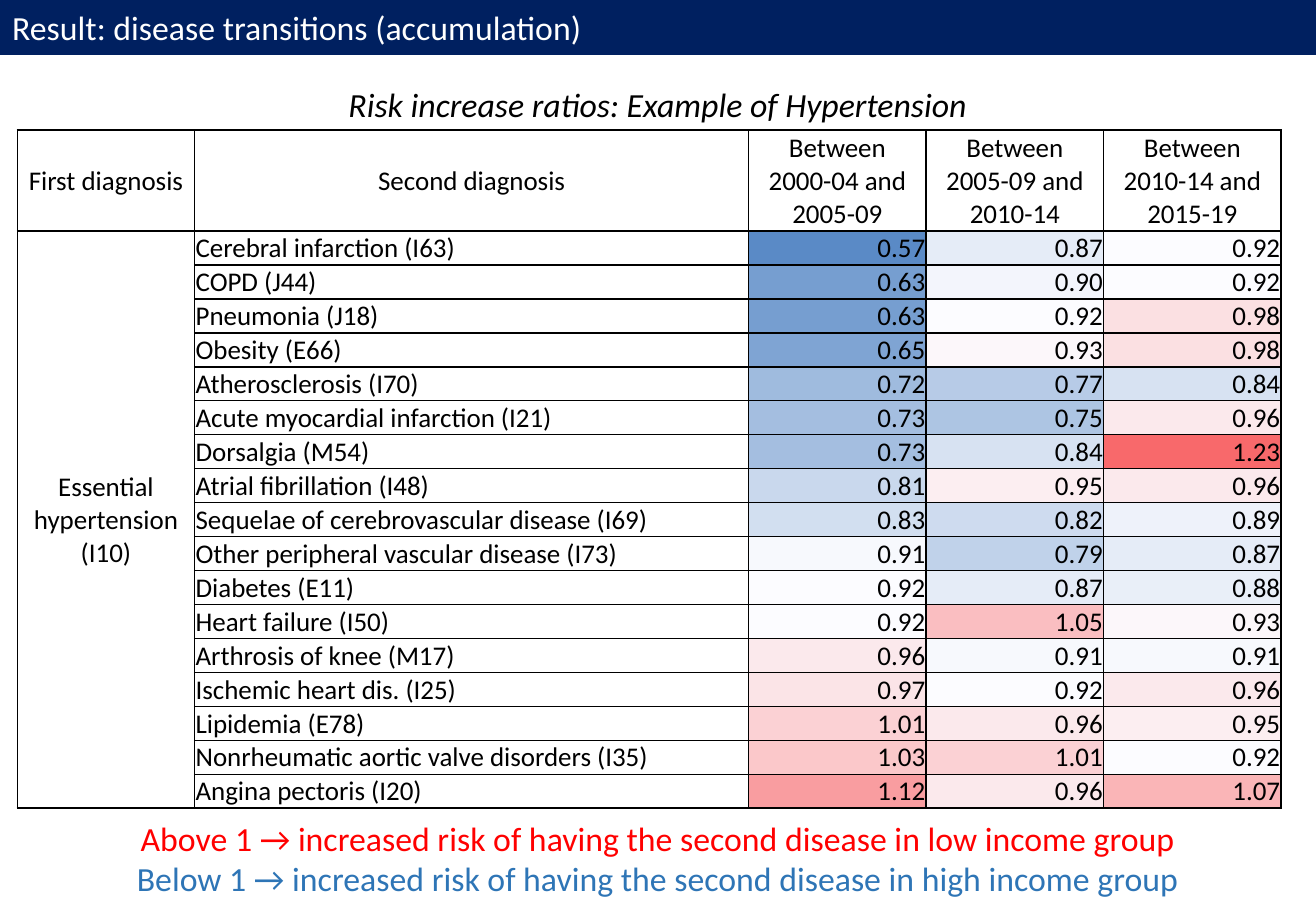
from lxml.etree import SubElement
from pptx import Presentation
from pptx.dml.color import RGBColor
from pptx.enum.text import MSO_ANCHOR, MSO_AUTO_SIZE, PP_ALIGN
from pptx.oxml.ns import qn
from pptx.util import Cm, Pt

# Content
TITLE = "Result: disease transitions (accumulation)"
SUBTITLE = "Risk increase ratios: Example of Hypertension"
READING_GUIDE = [
    ("Above 1 → increased risk of having the second disease in low income group", "above"),
    ("Below 1 → increased risk of having the second disease in high income group", "below"),
]
HEADERS = [
    "First diagnosis",
    "Second diagnosis",
    "Between\n2000-04 and 2005-09",
    "Between\n2005-09 and 2010-14",
    "Between\n2010-14 and 2015-19",
]
FIRST_DIAGNOSIS = "Essential hypertension (I10)"
RISK_RATIOS = [
    ("Cerebral infarction (I63)", 0.57, 0.87, 0.92),
    ("COPD (J44)", 0.63, 0.90, 0.92),
    ("Pneumonia (J18)", 0.63, 0.92, 0.98),
    ("Obesity (E66)", 0.65, 0.93, 0.98),
    ("Atherosclerosis (I70)", 0.72, 0.77, 0.84),
    ("Acute myocardial infarction (I21)", 0.73, 0.75, 0.96),
    ("Dorsalgia (M54)", 0.73, 0.84, 1.23),
    ("Atrial fibrillation (I48)", 0.81, 0.95, 0.96),
    ("Sequelae of cerebrovascular disease (I69)", 0.83, 0.82, 0.89),
    ("Other peripheral vascular disease (I73)", 0.91, 0.79, 0.87),
    ("Diabetes (E11)", 0.92, 0.87, 0.88),
    ("Heart failure (I50)", 0.92, 1.05, 0.93),
    ("Arthrosis of knee (M17)", 0.96, 0.91, 0.91),
    ("Ischemic heart dis. (I25)", 0.97, 0.92, 0.96),
    ("Lipidemia (E78)", 1.01, 0.96, 0.95),
    ("Nonrheumatic aortic valve disorders (I35)", 1.03, 1.01, 0.92),
    ("Angina pectoris (I20)", 1.12, 0.96, 1.07),
]

# Style
COLORS = {
    "navy": "002060", "white": "FFFFFF", "black": "000000",
    "above": "FF0000", "below": "2E75B6",
    "low": "5A8AC6", "middle": "FCFCFF", "high": "F8696B",
}
FONT = "Calibri"
SLIDE_WIDTH, SLIDE_HEIGHT = Cm(27.51), Cm(19.05)
TABLE_LEFT, TABLE_TOP = Cm(0.36), Cm(2.72)
COLUMN_WIDTHS = [Cm(3.71), Cm(11.58), Cm(3.71), Cm(3.71), Cm(3.71)]
HEADER_HEIGHT, ROW_HEIGHT = Cm(2.11), Cm(0.71)
CELL_MARGIN = Cm(0.02)


def color(name):
    return RGBColor.from_string(COLORS[name])


def format_paragraph(paragraph, size, color_name, alignment, italic=False):
    paragraph.alignment = alignment
    for run in paragraph.runs:
        run.font.name = FONT
        run.font.size = Pt(size)
        run.font.italic = italic
        run.font.color.rgb = color(color_name)


def add_centered_text(slide, top, height, lines, italic=False):
    text_frame = slide.shapes.add_textbox(0, top, SLIDE_WIDTH, height).text_frame
    text_frame.word_wrap = True
    text_frame.text = "\n".join(text for text, _ in lines)
    for paragraph, (_, color_name) in zip(text_frame.paragraphs, lines):
        format_paragraph(paragraph, 20, color_name, PP_ALIGN.CENTER, italic)


def heat_color(ratio):
    """Three-colour scale over all ratios, centred on their median."""
    ratios = sorted(value for row in RISK_RATIOS for value in row[1:])
    lowest, median, highest = ratios[0], ratios[len(ratios) // 2], ratios[-1]
    if ratio <= median:
        end, share = "low", (median - ratio) / (median - lowest)
    else:
        end, share = "high", (ratio - median) / (highest - median)
    channels = zip(color("middle"), color(end))
    return RGBColor(*(round(a + (b - a) * share) for a, b in channels))


def add_borders(cell):
    properties = cell._tc.get_or_add_tcPr()
    for position, side in enumerate(("a:lnL", "a:lnR", "a:lnT", "a:lnB")):
        line = SubElement(properties, qn(side), w=str(Pt(1)))
        fill = SubElement(line, qn("a:solidFill"))
        SubElement(fill, qn("a:srgbClr"), val=COLORS["black"])
        properties.insert(position, line)


def format_cell(cell, text, alignment, fill_color=None):
    cell.margin_left = cell.margin_right = cell.margin_top = CELL_MARGIN
    cell.margin_bottom = 0
    cell.vertical_anchor = MSO_ANCHOR.MIDDLE
    if fill_color is None:
        cell.fill.background()
    else:
        cell.fill.solid()
        cell.fill.fore_color.rgb = fill_color
    add_borders(cell)
    paragraph = cell.text_frame.paragraphs[0]
    paragraph.text = text
    paragraph.font.size = Pt(16)
    format_paragraph(paragraph, 16, "black", alignment)


def add_risk_table(slide):
    row_count = len(RISK_RATIOS) + 1
    table = slide.shapes.add_table(
        row_count, len(HEADERS), TABLE_LEFT, TABLE_TOP, sum(COLUMN_WIDTHS),
        HEADER_HEIGHT + ROW_HEIGHT * len(RISK_RATIOS)).table
    table.first_row = table.horz_banding = False
    for column, width in zip(table.columns, COLUMN_WIDTHS):
        column.width = width
    for index, row in enumerate(table.rows):
        row.height = ROW_HEIGHT if index else HEADER_HEIGHT

    for column, header in enumerate(HEADERS):
        format_cell(table.cell(0, column), header, PP_ALIGN.CENTER)
    for row, (disease, *ratios) in enumerate(RISK_RATIOS, start=1):
        first_text = FIRST_DIAGNOSIS if row == 1 else ""
        format_cell(table.cell(row, 0), first_text, PP_ALIGN.CENTER)
        format_cell(table.cell(row, 1), disease, PP_ALIGN.LEFT)
        for column, ratio in enumerate(ratios, start=2):
            format_cell(table.cell(row, column), f"{ratio:.2f}",
                        PP_ALIGN.RIGHT, heat_color(ratio))
    table.cell(1, 0).merge(table.cell(row_count - 1, 0))


def main():
    presentation = Presentation()
    presentation.slide_width, presentation.slide_height = SLIDE_WIDTH, SLIDE_HEIGHT
    slide = presentation.slides.add_slide(presentation.slide_layouts[5])

    # Title bar
    title = slide.shapes.title
    title.left, title.top, title.width, title.height = 0, 0, SLIDE_WIDTH, Cm(1.12)
    title.fill.solid()
    title.fill.fore_color.rgb = color("navy")
    title.line.color.rgb = color("navy")
    title.line.width = Pt(2.25)
    title.text_frame.text = TITLE
    title.text_frame.auto_size = MSO_AUTO_SIZE.NONE
    title.text_frame.vertical_anchor = MSO_ANCHOR.MIDDLE
    format_paragraph(title.text_frame.paragraphs[0], 20, "white", PP_ALIGN.LEFT)

    # Reading guide, subtitle and table
    add_centered_text(slide, Cm(16.97), Cm(1.96), READING_GUIDE)
    add_centered_text(slide, Cm(1.63), Cm(1.12), [(SUBTITLE, "black")], italic=True)
    add_risk_table(slide)

    presentation.save("out.pptx")


if __name__ == "__main__":
    main()
